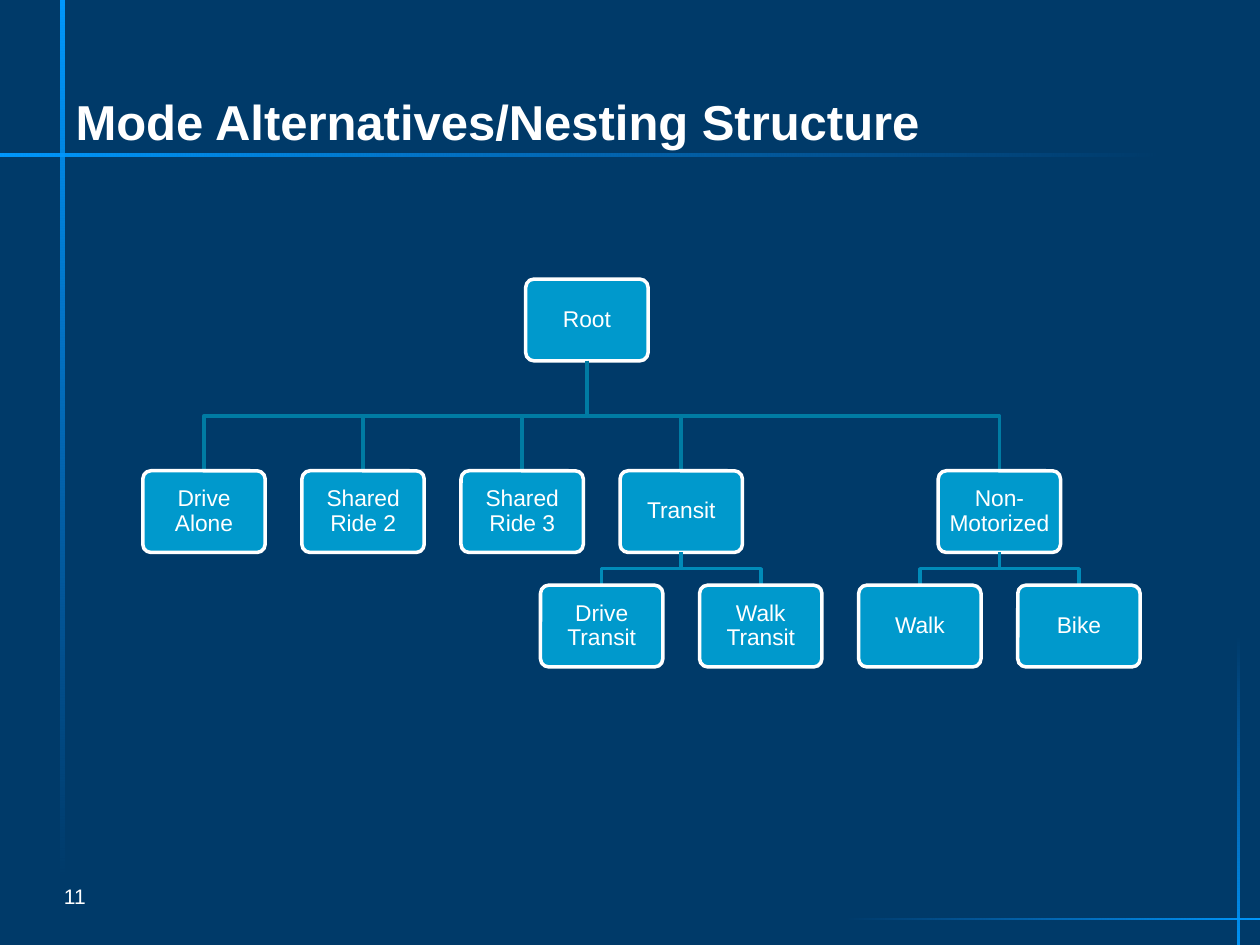
from dataclasses import dataclass

from pptx import Presentation
from pptx.dml.color import RGBColor as RGB
from pptx.enum.shapes import MSO_SHAPE as Shape
from pptx.enum.text import MSO_ANCHOR as Anchor, MSO_AUTO_SIZE as AutoSize, PP_ALIGN as Align
from pptx.oxml import parse_xml
from pptx.oxml.ns import nsdecls
from pptx.util import Pt


@dataclass(frozen=True)
class Theme:
    font: str = "Arial"
    background: RGB = RGB.from_string("003A69")
    text: RGB = RGB.from_string("FFFFFF")
    node: RGB = RGB.from_string("0099CC")
    upper_branch: RGB = RGB.from_string("007BA3")
    lower_branch: RGB = RGB.from_string("008BB9")
    glow: RGB = RGB.from_string("0099FF")
    glow_end: RGB = RGB.from_string("0C92FF")
    title_size: int = 28
    node_size: int = 13
    number_size: int = 12
    line_width: int = 2


# Tree geometry in points
NODE_W, NODE_H = 69.9, 46.7
FIRST_X, PITCH = 116.6, 90.9
ROOT_X = 335.4
LEVEL_TOPS = (159.5, 269, 334.4)

# Centre column of each mode, with its nested choices
MODES = [
    ("Drive Alone", 0, []),
    ("Shared Ride 2", 1, []),
    ("Shared Ride 3", 2, []),
    ("Transit", 3, ["Drive Transit", "Walk Transit"]),
    ("Non-Motorized", 5, ["Walk", "Bike"]),
]

# Left, top, width, height and rotation of the fading guide lines
GUIDES = [
    (325.4, -249.8, 2, 676.8, 270),
    (34.7, -6.5, 2, 509, 0),
    (603.4, 404.6, 1, 241.2, 90),
    (707, 362.9, 1, 190, 180),
]


def apply(target, values):
    for name, value in values.items():
        setattr(target, name, value)


class SlideBuilder:
    def __init__(self, slide, theme):
        self.slide, self.shapes, self.theme = slide, slide.shapes, theme
        slide.background.fill.solid()
        slide.background.fill.fore_color.rgb = theme.background

    def label(self, holder, text, size, frame_format, paragraph_format, bold=False):
        frame = holder.text_frame
        frame.text = text
        apply(frame, {"word_wrap": True, "auto_size": AutoSize.NONE, **frame_format})
        paragraph = frame.paragraphs[0]
        apply(paragraph, paragraph_format)
        font = paragraph.runs[0].font
        apply(font, {"name": self.theme.font, "size": Pt(size), "bold": bold})
        font.color.rgb = self.theme.text

    def title(self, text, left, top, width, height):
        title = self.shapes.title
        apply(title, {"left": Pt(left), "top": Pt(top),
                      "width": Pt(width), "height": Pt(height)})
        self.label(title, text, self.theme.title_size,
                   {"vertical_anchor": Anchor.BOTTOM}, {"alignment": Align.LEFT}, bold=True)

    def number(self, text, left, top, width, height):
        box = self.shapes.add_textbox(Pt(left), Pt(top), Pt(width), Pt(height))
        self.label(box, text, self.theme.number_size,
                   {"vertical_anchor": Anchor.MIDDLE}, {"alignment": Align.LEFT})

    def guide(self, left, top, width, height, rotation):
        bar = self.shapes.add_shape(Shape.RECTANGLE, Pt(left), Pt(top), Pt(width), Pt(height))
        bar.rotation = rotation
        bar.shadow.inherit = False
        bar.line.fill.background()
        bar.fill.gradient()
        bar.fill.gradient_angle = 270
        start, end = bar.fill.gradient_stops
        start.color.rgb, end.color.rgb = self.theme.glow, self.theme.glow_end
        start.position, end.position = 0, 1
        # The far end fades to fully transparent
        end_color = bar.element.xpath(".//a:gs[last()]/a:srgbClr")[0]
        end_color.append(parse_xml(f'<a:alpha {nsdecls("a")} val="0"/>'))

    def node(self, text, center, top):
        box = self.shapes.add_shape(Shape.ROUNDED_RECTANGLE, Pt(center - NODE_W / 2), Pt(top),
                                    Pt(NODE_W), Pt(NODE_H))
        box.adjustments[0] = 0.1
        box.shadow.inherit = False
        box.fill.solid()
        box.fill.fore_color.rgb = self.theme.node
        box.line.color.rgb = self.theme.text
        box.line.width = Pt(self.theme.line_width)
        margins = {f"margin_{side}": Pt(3.6) for side in ("left", "top", "right", "bottom")}
        self.label(box, text, self.theme.node_size,
                   {"vertical_anchor": Anchor.MIDDLE, **margins},
                   {"alignment": Align.CENTER, "line_spacing": 0.9})

    def branch(self, parent_x, child_x, level, color):
        start, end = LEVEL_TOPS[level] + NODE_H, LEVEL_TOPS[level + 1]
        middle = (start + end) / 2
        bends = [(parent_x, middle), (child_x, middle), (child_x, end)]
        outline = self.shapes.build_freeform(Pt(parent_x), Pt(start))
        outline.add_line_segments([(Pt(x), Pt(y)) for x, y in bends], close=False)
        elbow = outline.convert_to_shape()
        elbow.shadow.inherit = False
        elbow.fill.background()
        elbow.line.color.rgb = color
        elbow.line.width = Pt(self.theme.line_width)


def main():
    deck = Presentation()
    deck.slide_width, deck.slide_height = Pt(720), Pt(540)
    theme = Theme()
    builder = SlideBuilder(deck.slides.add_slide(deck.slide_layouts[5]), theme)

    # Frame of the slide
    for guide in GUIDES:
        builder.guide(*guide)
    builder.title("Mode Alternatives/Nesting Structure", 36, -0.7, 648, 90)
    builder.number("11", 29.5, 497.5, 52.6, 28.8)

    # Nesting tree
    root_top, mode_top, choice_top = LEVEL_TOPS
    builder.node("Root", ROOT_X, root_top)
    for mode, column, choices in MODES:
        mode_x = FIRST_X + column * PITCH
        builder.branch(ROOT_X, mode_x, 0, theme.upper_branch)
        builder.node(mode, mode_x, mode_top)
        for index, choice in enumerate(choices):
            choice_x = mode_x + (index - (len(choices) - 1) / 2) * PITCH
            builder.branch(mode_x, choice_x, 1, theme.lower_branch)
            builder.node(choice, choice_x, choice_top)

    deck.save("out.pptx")


if __name__ == "__main__":
    main()
